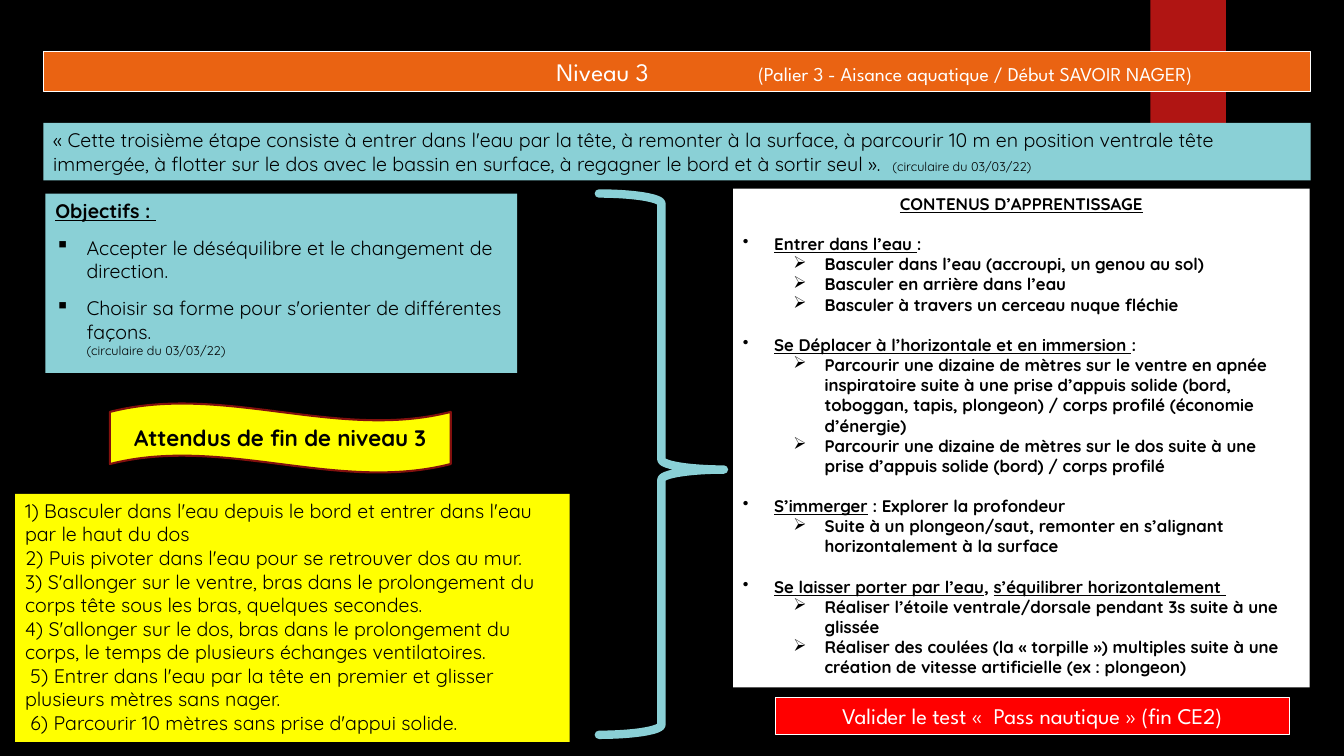
"""Build the Niveau 3 swimming slide: goals, expected skills and learning content."""
from lxml.etree import SubElement
from pptx import Presentation
from pptx.dml.color import RGBColor
from pptx.enum.shapes import MSO_SHAPE as Preset
from pptx.enum.text import MSO_ANCHOR as Anchor, PP_ALIGN as Align
from pptx.oxml.ns import qn
from pptx.util import Inches, Pt

BLACK = RGBColor(0x00, 0x00, 0x00)
WHITE = RGBColor(0xFF, 0xFF, 0xFF)
CRIMSON = RGBColor(0xB0, 0x15, 0x13)
ORANGE = RGBColor(0xEA, 0x63, 0x12)
TEAL = RGBColor(0x8A, 0xD0, 0xD6)
YELLOW = RGBColor(0xFF, 0xFF, 0x00)
RED = RGBColor(0xFF, 0x00, 0x00)
MAROON = RGBColor(0x82, 0x10, 0x0E)
TITLE_FONT = "League Spartan"
BODY_FONT = "Quicksand"

UNDER = {"underline": True}
BOLD_UNDER = {"bold": True, "underline": True}
SMALL = {"size": 9}
CIRCULAR = "(circulaire du 03/03/22)"

LEVEL = ("\tNiveau 3", "\t(Palier 3 - Aisance aquatique / Début SAVOIR NAGER)")
STEP = [
    "« Cette troisième étape consiste à entrer dans l'eau par la tête, à remonter à la surface, "
    "à parcourir 10 m en position ventrale tête",
    "immergée, à flotter sur le dos avec le bassin en surface, à regagner le bord et à sortir seul ».  ",
]
GOALS_TITLE = "Objectifs : "
GOALS = [
    "Accepter le déséquilibre et le changement de direction.",
    "Choisir sa forme pour s'orienter de différentes façons.",
]
EXPECTED_TITLE = "Attendus de fin de niveau 3"
EXPECTED = [
    "1) Basculer dans l'eau depuis le bord et entrer dans l'eau par le haut du dos",
    "2) Puis pivoter dans l'eau pour se retrouver dos au mur.",
    "3) S'allonger sur le ventre, bras dans le prolongement du corps tête sous les bras, quelques secondes.",
    "4) S'allonger sur le dos, bras dans le prolongement du corps, le temps de plusieurs échanges ventilatoires.",
    " 5) Entrer dans l'eau par la tête en premier et glisser plusieurs mètres sans nager.",
    " 6) Parcourir 10 mètres sans prise d'appui solide.",
]
CONTENT_TITLE = "CONTENUS D’APPRENTISSAGE"
CONTENT = [
    ([("Entrer dans l’eau ", UNDER), (":", {})], [
        "Basculer dans l’eau (accroupi, un genou au sol)",
        "Basculer en arrière dans l’eau",
        "Basculer à travers un cerceau nuque fléchie",
    ]),
    ([("Se Déplacer à l’horizontale et en immersion ", UNDER), (":", {})], [
        "Parcourir une dizaine de mètres sur le ventre en apnée inspiratoire suite à une prise d’appuis "
        "solide (bord, toboggan, tapis, plongeon) / corps profilé (économie d’énergie)",
        "Parcourir une dizaine de mètres sur le dos suite à une prise d’appuis solide (bord) / corps profilé",
    ]),
    ([("S’immerger", UNDER), (" : Explorer la profondeur", {})], [
        "Suite à un plongeon/saut, remonter en s’alignant horizontalement à la surface",
    ]),
    ([("Se laisser porter par l’eau", UNDER), (", ", {}), ("s’équilibrer horizontalement ", UNDER)], [
        "Réaliser l’étoile ventrale/dorsale pendant 3s suite à une glissée",
        "Réaliser des coulées (la « torpille ») multiples suite à une création de vitesse artificielle "
        "(ex : plongeon)",
    ]),
]
TEST = "Valider le test «  Pass nautique » (fin CE2)"


def add_panel(page, place, fill=None, line=None, weight=0.75, preset=Preset.RECTANGLE):
    panel = page.shapes.add_shape(preset, *[Inches(value) for value in place])
    panel.shadow.inherit = False
    if fill is None:
        panel.fill.background()
    else:
        panel.fill.solid()
        panel.fill.fore_color.rgb = fill
    if line is None:
        panel.line.fill.background()
    else:
        panel.line.color.rgb = line
        panel.line.width = Pt(weight)
    panel.text_frame.word_wrap = True
    panel.text_frame.vertical_anchor = Anchor.TOP
    return panel


def add_text(box, text, new=True, size=14, font=BODY_FONT, color=BLACK, bold=False, underline=False,
             align=Align.LEFT, before=0, bullet=None, indent=0, tabs=()):
    frame = box.text_frame
    para = frame.paragraphs[-1]
    if new:
        if para.runs:
            para = frame.add_paragraph()
        para.alignment = align
        para.space_before = Pt(before)
        props = para._p.get_or_add_pPr()
        if bullet:
            props.set("marL", str(Inches(indent)))
            props.set("indent", str(Inches(-0.31)))
            SubElement(props, qn("a:buChar"), char=bullet)
        if tabs:
            stops = SubElement(props, qn("a:tabLst"))
            for stop in tabs:
                SubElement(stops, qn("a:tab"), pos=str(Inches(stop)), algn="l")
    span = para.add_run()
    span.text = text
    span.font.size = Pt(size)
    span.font.name = font
    span.font.color.rgb = color
    span.font.bold = bold
    span.font.underline = underline
    return para


def main():
    deck = Presentation()
    deck.slide_width, deck.slide_height = Inches(13.33), Inches(7.5)
    page = deck.slides.add_slide(deck.slide_layouts[6])
    page.background.fill.solid()
    page.background.fill.fore_color.rgb = BLACK

    add_panel(page, (11.41, 0, 0.75, 1.25), CRIMSON)

    header = add_panel(page, (0.43, 0.51, 12.57, 0.4), ORANGE, WHITE)
    title_style = {"font": TITLE_FONT, "color": WHITE}
    add_text(header, LEVEL[0], size=18, tabs=(4.99, 6.99), **title_style)
    add_text(header, LEVEL[1], new=False, **title_style)

    goals = add_panel(page, (0.45, 1.92, 4.68, 1.78), TEAL)
    add_text(goals, GOALS_TITLE, **BOLD_UNDER)
    for goal in GOALS:
        para = add_text(goals, goal, before=9.6, bullet="▪", indent=0.31)
    para.add_line_break()
    add_text(goals, CIRCULAR, new=False, **SMALL)

    expected = add_panel(page, (0.15, 4.9, 5.5, 2.46), YELLOW)
    for skill in EXPECTED:
        add_text(expected, skill)

    step = add_panel(page, (0.43, 1.22, 12.57, 0.57), TEAL)
    for sentence in STEP:
        add_text(step, sentence)
    add_text(step, CIRCULAR, new=False, **SMALL)

    test = add_panel(page, (7.69, 6.92, 5.1, 0.37), RED, WHITE)
    add_text(test, TEST, size=16, align=Align.CENTER, **title_style)

    wave = add_panel(page, (1.09, 4, 3.38, 0.69), YELLOW, MAROON, 1.5, Preset.WAVE)
    wave.text_frame.vertical_anchor = Anchor.MIDDLE
    add_text(wave, EXPECTED_TITLE, size=16, bold=True, align=Align.CENTER)

    content = add_panel(page, (7.27, 1.87, 5.72, 4.95), WHITE)
    add_text(content, CONTENT_TITLE, size=12, align=Align.CENTER, **BOLD_UNDER)
    for heading, details in CONTENT:
        for order, (words, style) in enumerate(heading):
            add_text(content, words, new=order == 0, size=12, bold=True, before=14.4,
                     bullet="•", indent=0.31, **style)
        for detail in details:
            para = add_text(content, detail, size=12, bold=True, bullet="➢", indent=0.81)
            para.level = 1

    brace = add_panel(page, (5.94, 1.92, 1.24, 5.37), None, TEAL, 6, Preset.RIGHT_BRACE)
    brace.adjustments[0], brace.adjustments[1] = 0.08, 0.51
    brace.line._get_or_add_ln().set("cap", "rnd")

    deck.save("out.pptx")


if __name__ == "__main__":
    main()
